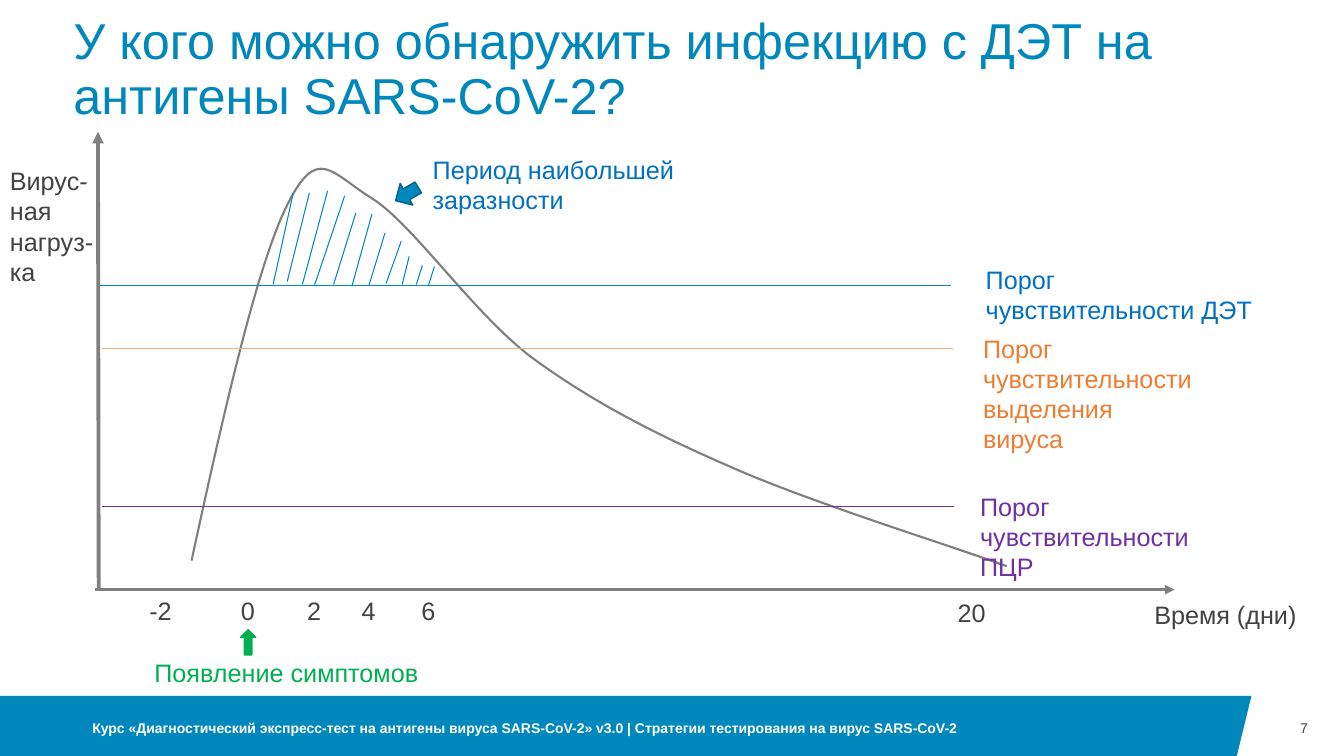
from dataclasses import dataclass

from lxml import etree
from pptx import Presentation
from pptx.dml.color import RGBColor
from pptx.enum.shapes import MSO_CONNECTOR, MSO_SHAPE
from pptx.enum.text import MSO_ANCHOR, MSO_AUTO_SIZE, PP_ALIGN
from pptx.oxml.ns import qn
from pptx.util import Pt

LINE = MSO_CONNECTOR.STRAIGHT
ARROW = MSO_SHAPE.RIGHT_ARROW
TOP, MIDDLE, BOTTOM = MSO_ANCHOR.TOP, MSO_ANCHOR.MIDDLE, MSO_ANCHOR.BOTTOM
LEFT, RIGHT = PP_ALIGN.LEFT, PP_ALIGN.RIGHT
NO_FIT = MSO_AUTO_SIZE.NONE


@dataclass(frozen=True)
class Theme:
    font: str = "Arial"
    head: int = 36
    body: int = 18
    small: int = 10
    main: str = "0087BC"
    deep: str = "006289"
    blue: str = "0070C0"
    ink: str = "424242"
    gray: str = "7F7F7F"
    green: str = "00B050"
    violet: str = "7030A0"
    orange: str = "ED7D31"
    peach: str = "F4B081"
    white: str = "FFFFFF"


T = Theme()

# Viral load curve: bounds, start point, then two control points and an end per part
BOUNDS = (66.8, 26.2, 582.5, 283.7)
START = (66.8, 306.3)
PARTS = [
    ((89.8, 200.5), (113.6, 95.4), (135.2, 52.2)),
    ((156.8, 9), (166.2, 29.1), (195, 47.1)),
    ((224.5, 65.1), (267, 128.5), (309.4, 160.9)),
    ((352.6, 192.6), (397.3, 215.6), (452, 239.4)),
    ((506.7, 263.8), (610.4, 296.2), (637.8, 306.3)),
    ((664.4, 315.7), (638.5, 306.3), (612.6, 297.7)),
]
# Hatching strokes: top x, top y, bottom x, bottom y
HATCH = [
    (139.5, 43.5, 125.1, 109), (151, 43.5, 135.2, 106.9),
    (164, 42.1, 146, 109), (176.2, 45.7, 154.6, 109.8),
    (184.2, 57.9, 168.3, 109), (195.7, 58.6, 181.3, 110.5),
    (205, 72.3, 193.5, 109.8), (216.6, 78.1, 205.8, 108.3),
    (222.3, 88.9, 217.3, 109), (231.7, 95.4, 227.4, 109),
    (240.3, 96.1, 236, 109.8),
]
# Thresholds: line start, end, y and colour; label left, top, width, colour, text
LIMITS = [
    (0.6, 609, 109.8, T.main, 627, 91, 214, T.blue,
     "Порог чувствительности ДЭТ"),
    (2.7, 611, 154.7, T.peach, 625.1, 140.2, 165.6, T.orange,
     "Порог чувствительности выделения вируса"),
    (2.7, 611.8, 267.4, T.violet, 623, 253, 187, T.violet,
     "Порог чувствительности ПЦР"),
]
# Days: label, left, width
DAYS = [("-2", 29.6, 36), ("0", 94.9, 21), ("2", 142.2, 21),
        ("4", 181.3, 21), ("6", 223.8, 21), ("20", 607, 46.8)]


def rgb(code):
    return RGBColor.from_string(code)


def put(shape, box):
    shape.left, shape.top, shape.width, shape.height = map(Pt, box)


def write(shape, text, size=T.body, color=T.ink, bold=False, align=LEFT,
          anchor=TOP, pad=(7.2, 3.6), space=None):
    frame = shape.text_frame
    frame.word_wrap, frame.auto_size = True, NO_FIT
    frame.vertical_anchor = anchor
    frame.margin_left = frame.margin_right = Pt(pad[0])
    frame.margin_top = frame.margin_bottom = Pt(pad[1])
    para = frame.paragraphs[0]
    para.alignment, para.line_spacing = align, space
    run = para.add_run()
    run.text = text
    font = run.font
    font.name, font.size, font.bold = T.font, Pt(size), bold
    font.color.rgb = rgb(color)


def label(slide, box, text, **form):
    write(slide.shapes.add_textbox(*map(Pt, box)), text, **form)


def line(slide, ends, color, width=0.75, head=False):
    link = slide.shapes.add_connector(LINE, *map(Pt, ends))
    link.line.color.rgb, link.line.width = rgb(color), Pt(width)
    if head:
        tip = etree.SubElement(link.line._get_or_add_ln(), qn("a:tailEnd"))
        tip.set("type", "triangle")
    etree.SubElement(link._element.spPr, qn("a:effectLst"))


def paint(shape, fill, edge=None, width=1):
    shape.shadow.inherit = False
    shape.fill.solid()
    shape.fill.fore_color.rgb = rgb(fill)
    if edge:
        shape.line.color.rgb, shape.line.width = rgb(edge), Pt(width)
    else:
        shape.line.fill.background()


def arrow(slide, box, turn, fill, edge):
    shape = slide.shapes.add_shape(ARROW, *map(Pt, box))
    shape.rotation = turn
    paint(shape, fill, edge)


def outline(slide, points, closed):
    dots = [(Pt(x), Pt(y)) for x, y in points]
    form = slide.shapes.build_freeform(*dots[0])
    form.add_line_segments(dots[1:], close=closed)
    return form.convert_to_shape()


def curve(slide, x, y):
    left, top, w, h = BOUNDS
    corner = (x + left, y + top)
    shape = outline(slide, [corner, (corner[0] + w, corner[1] + h)], False)
    track = next(shape._element.iter(qn("a:path")))
    for step in list(track):
        track.remove(step)
    for tag, points in [("a:moveTo", [START])] + [("a:cubicBezTo", p) for p in PARTS]:
        step = etree.SubElement(track, qn(tag))
        for a, b in points:
            dot = etree.SubElement(step, qn("a:pt"))
            dot.set("x", str(Pt(a - left)))
            dot.set("y", str(Pt(b - top)))
    return shape


def header(slide, box):
    title = slide.shapes.title
    put(title, box)
    write(title, "У кого можно обнаружить инфекцию с ДЭТ на антигены SARS-CoV-2?",
          size=T.head, color=T.main, anchor=BOTTOM, pad=(0, 0), space=0.9)


def footer(slide, box):
    x, y, w, h = box
    band = [(x, y), (x + w, y), (x + w - 11, y + h), (x, y + h)]
    paint(outline(slide, band, True), T.main)
    form = dict(size=T.small, anchor=MIDDLE, pad=(0, 0))
    label(slide, (x + 66, y + 3.2, 716, 39.6),
          "Курс «Диагностический экспресс-тест на антигены вируса SARS-CoV-2» v3.0"
          " | Стратегии тестирования на вирус SARS-CoV-2",
          color=T.white, bold=True, **form)
    label(slide, (x + w, y, 40.3, h + 0.6), "7", align=RIGHT, **form)


def plot(slide, box):
    x, y, w, h = box
    base = y + h

    # Time axis and viral load curve
    line(slide, (x - 2.3, base, x + w, base), T.gray, 2.25, head=True)
    paint(curve(slide, x, y), T.white, T.gray, 1.5)

    # Thresholds
    for a, b, v, tint, left, top, wide, color, text in LIMITS:
        line(slide, (x + a, y + v, x + b, y + v), tint)
        label(slide, (x + left, y + top, wide, 28.8), text, color=color)

    # Load axis and names of axes
    line(slide, (x + 0.5, base + 0.8, x, y), T.gray, 2.75, head=True)
    label(slide, (x - 70, y + 20.5, 88.6, 94.3), "Вирус-ная нагруз-ка")
    label(slide, (x + w - 21.6, base + 3, 142.6, 28.8), "Время (дни)")

    # Days and onset of symptoms
    for day, left, wide in DAYS:
        drop = 2 if day == "20" else 0.5
        label(slide, (x + left, base + drop, wide, 28.8), day)
    arrow(slide, (x + 98.2, base + 32.2, 18, 10.8), 270, T.green, T.green)
    label(slide, (x + 33.2, base + 44.8, 247, 28.8), "Появление симптомов",
          color=T.green)

    # Most contagious period
    for a, b, c, d in HATCH:
        line(slide, (x + a, y + b, x + c, y + d), T.main)
    arrow(slide, (x + 211.3, y + 35.4, 18.7, 18), 149.6, T.main, T.deep)
    label(slide, (x + 232, y + 12.6, 200, 51), "Период наибольшей заразности",
          color=T.blue)


def main():
    deck = Presentation()
    deck.slide_width, deck.slide_height = Pt(960), Pt(540)
    slide = deck.slides.add_slide(deck.slide_layouts[5])
    header(slide, (52.4, 15.1, 869.8, 74.2))
    footer(slide, (0, 497, 894, 45))
    plot(slide, (70, 94.2, 769, 327))
    deck.save("out.pptx")


if __name__ == "__main__":
    main()
